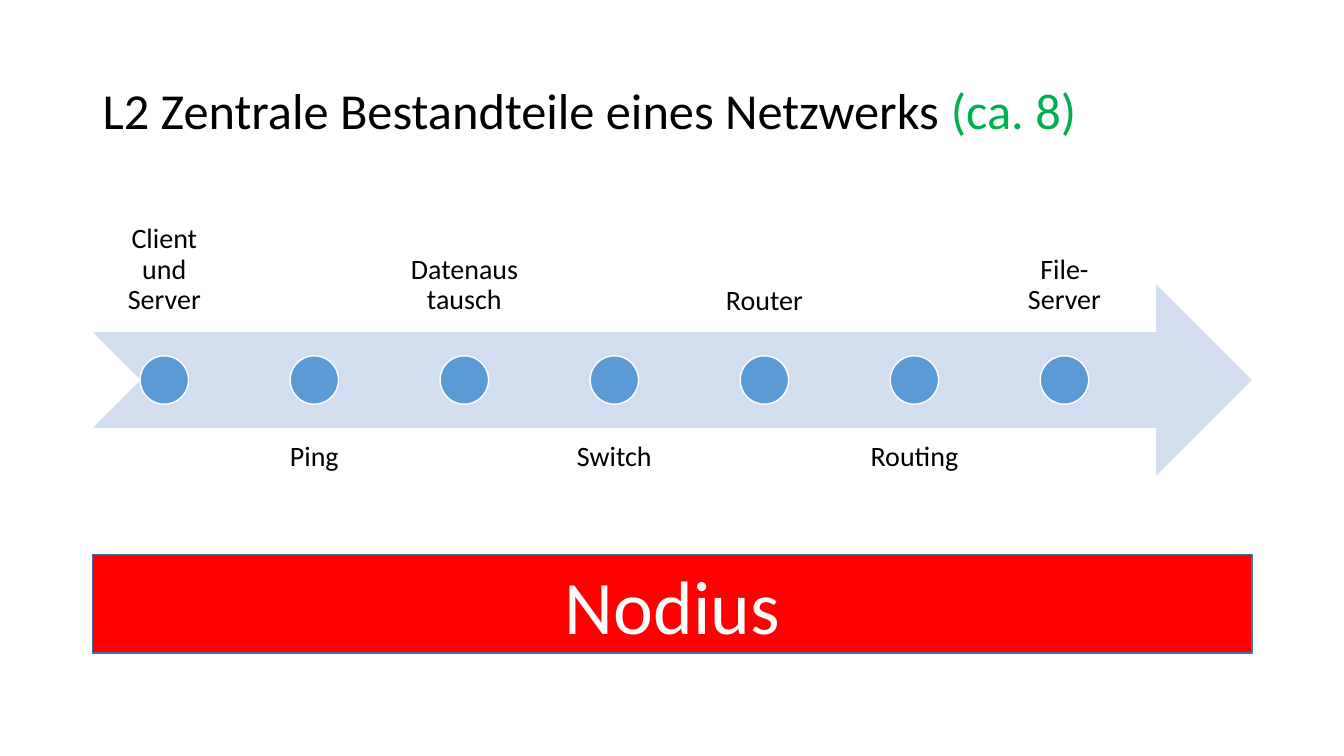
"""Build a slide with a timeline of network lessons above a tool banner."""
from dataclasses import dataclass

from pptx import Presentation
from pptx.dml.color import RGBColor
from pptx.enum.shapes import MSO_SHAPE
from pptx.enum.text import MSO_ANCHOR, PP_ALIGN
from pptx.util import Pt

ARROW = MSO_SHAPE.NOTCHED_RIGHT_ARROW
OVAL = MSO_SHAPE.OVAL
RECT = MSO_SHAPE.RECTANGLE
TOP, MIDDLE, BOTTOM = MSO_ANCHOR.TOP, MSO_ANCHOR.MIDDLE, MSO_ANCHOR.BOTTOM
LEFT, CENTER = PP_ALIGN.LEFT, PP_ALIGN.CENTER

COLORS = {
    "black": "000000", "white": "FFFFFF", "green": "00B050", "red": "FF0000",
    "pale": "D2DEEF", "blue": "5B9BD5", "edge": "43739E",
}
EDGE, WIDE = 66.24, 828
STEP = 107.16
LABEL, TALL = 102.24, 136.8
DOT = 34.56
STEPS = ["Client und Server", "Ping", "Datenaustausch", "Switch", "Router",
         "Routing", "File-Server"]


@dataclass
class Box:
    left: float
    top: float
    width: float
    height: float

    def place(self) -> list:
        return [Pt(self.left), Pt(self.top), Pt(self.width), Pt(self.height)]


@dataclass
class Run:
    text: str
    size: float
    color: str = "black"


def tone(name: str) -> RGBColor:
    return RGBColor.from_string(COLORS[name])


def draw(shapes, kind, box: Box, fill: str, line: str = ""):
    shape = shapes.add_shape(kind, *box.place())
    shape.shadow.inherit = False
    shape.fill.solid()
    shape.fill.fore_color.rgb = tone(fill)
    if line:
        shape.line.color.rgb = tone(line)
        shape.line.width = Pt(1)
    else:
        shape.line.fill.background()
    return shape


def write(shape, runs: list[Run], frame: dict, para: dict) -> None:
    body = shape.text_frame
    first = body.paragraphs[0]
    for target, style in ((body, {"word_wrap": True} | frame), (first, para)):
        for key, value in style.items():
            setattr(target, key, value)
    for item in runs:
        run = first.add_run()
        run.text = item.text
        run.font.color.rgb = tone(item.color)
        for key, value in {"name": "Calibri", "size": Pt(item.size)}.items():
            setattr(run.font, key, value)


def label(shapes, text: str, box: Box, anchor) -> None:
    sides = ("left", "top", "right", "bottom")
    frame = {f"margin_{side}": Pt(11.52) for side in sides}
    write(shapes.add_textbox(*box.place()), [Run(text, 20)],
          frame | {"vertical_anchor": anchor},
          {"alignment": CENTER, "line_spacing": 0.9, "space_after": Pt(7)})


def main() -> None:
    deck = Presentation()
    deck.slide_width, deck.slide_height = Pt(960), Pt(540)
    shapes = deck.slides.add_slide(deck.slide_layouts[6]).shapes

    title = shapes.add_textbox(*Box(EDGE, 28.8, WIDE, 104.4).place())
    write(title, [Run("L2 Zentrale Bestandteile eines Netzwerks", 36),
                  Run(" (ca. 8)", 36, "green")],
          {"vertical_anchor": MIDDLE},
          {"alignment": LEFT, "line_spacing": 0.9})

    draw(shapes, ARROW, Box(EDGE, 203.04, WIDE, TALL), "pale")
    for index, text in enumerate(STEPS):
        left = EDGE + index * STEP
        top, anchor = (305.28, TOP) if index % 2 else (100.08, BOTTOM)
        label(shapes, text, Box(left, top, LABEL, TALL), anchor)
        spot = Box(left + (LABEL - DOT) / 2, 254.16, DOT, DOT)
        draw(shapes, OVAL, spot, "blue", "white")

    banner = draw(shapes, RECT, Box(EDGE, 396, WIDE, 70.56), "red", "edge")
    write(banner, [Run("Nodius", 54, "white")],
          {"vertical_anchor": MIDDLE}, {"alignment": CENTER})
    deck.save("out.pptx")


if __name__ == "__main__":
    main()
